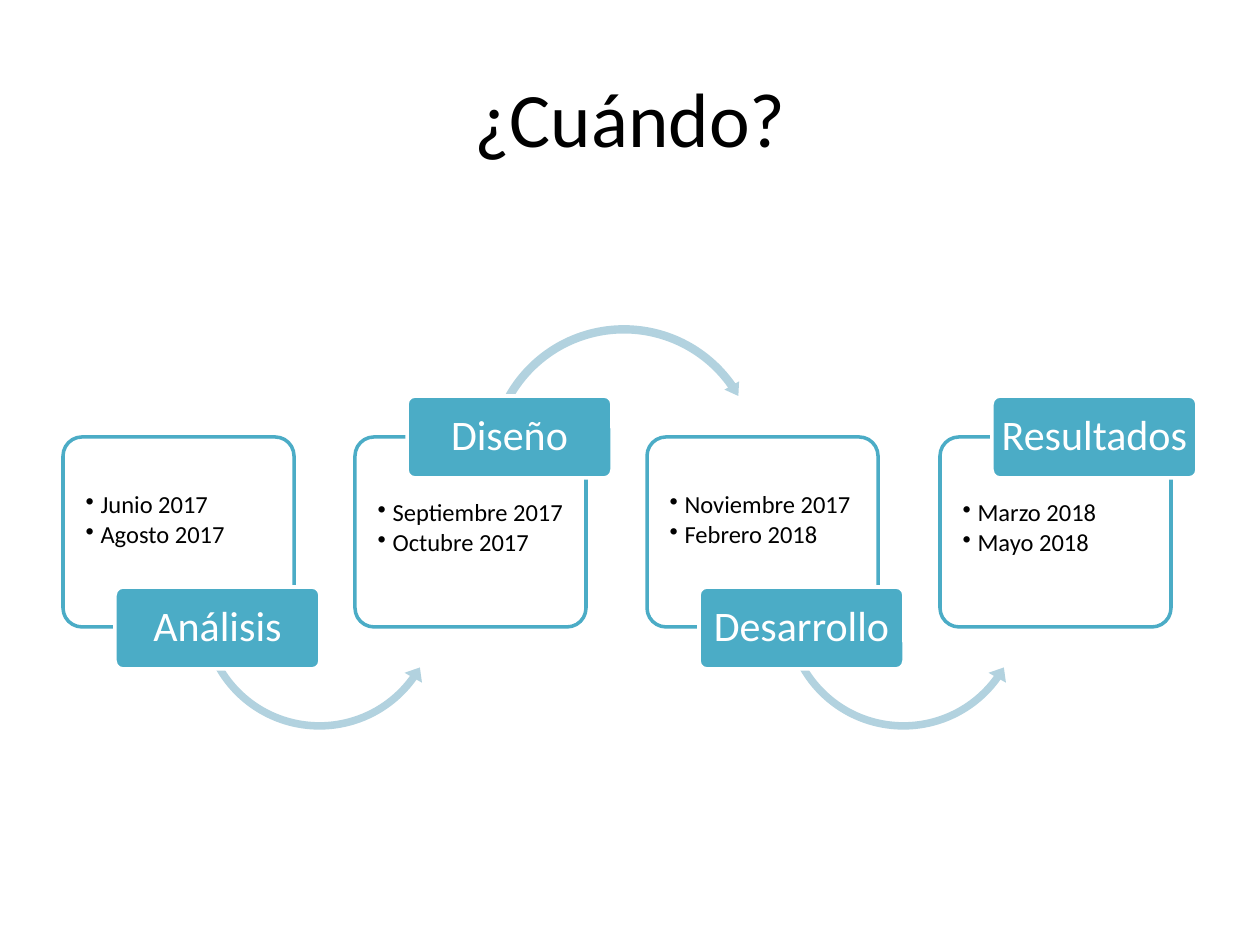
from lxml.etree import SubElement
from pptx import Presentation
from pptx.dml.color import RGBColor
from pptx.enum.shapes import MSO_SHAPE
from pptx.enum.text import MSO_ANCHOR, PP_ALIGN
from pptx.oxml.ns import qn
from pptx.util import Pt

TITLE = "¿Cuándo?"
STEPS = [
    ("Análisis", ["Junio 2017", "Agosto 2017"]),
    ("Diseño", ["Septiembre 2017", "Octubre 2017"]),
    ("Desarrollo", ["Noviembre 2017", "Febrero 2018"]),
    ("Resultados", ["Marzo 2018", "Mayo 2018"]),
]
TEAL, PALE, WHITE, BLACK = "4BACC6", "B2D2DF", "FFFFFF", "000000"
LOW = dict(label=587, pad=50, kind=MSO_SHAPE.LEFT_CIRCULAR_ARROW,
           arrow=(131, 485, 251), bend=(0.03, 3.64, 21.39, 90.24, 0.04))
HIGH = dict(label=396, pad=58, kind=MSO_SHAPE.CIRCULAR_ARROW,
            arrow=(129, 321, 280), bend=(0.03, 3.23, 195.02, 125.76, 0.03))


def px(n):
    return round(n * 914400 / 126)


def paint(color, text):
    color.rgb = RGBColor.from_string(text)


def add(kind, box, fill, line=None, bend=(0.1,)):
    shape = slide.shapes.add_shape(kind, *map(px, box))
    shape.shadow.inherit = False
    for i, value in enumerate(bend):
        shape.adjustments[i] = value
    shape.fill.solid()
    paint(shape.fill.fore_color, fill)
    if line:
        paint(shape.line.color, line)
        shape.line.width = Pt(2)
    else:
        shape.line.fill.background()
    return shape


def write(shape, lines, size, color, align, anchor, pads, bullet=False):
    frame = shape.text_frame
    frame.word_wrap = True
    frame.vertical_anchor = anchor
    (frame.margin_left, frame.margin_top,
     frame.margin_right, frame.margin_bottom) = map(px, pads)
    frame.text = "\n".join(lines)
    for para in frame.paragraphs:
        para.alignment = align
        para.line_spacing = 0.9
        if bullet:
            para.space_after = Pt(2)
            props = para._p.get_or_add_pPr()
            props.set("marL", str(px(15)))
            props.set("indent", str(px(-15)))
            SubElement(props, qn("a:buChar")).set("char", "•")
        para.font.size = Pt(size)
        para.font.name = "Calibri"
        paint(para.font.color, color)


deck = Presentation()
deck.slide_width, deck.slide_height = px(1260), px(945)
slide = deck.slides.add_slide(deck.slide_layouts[5])

title = slide.shapes.title
title.left, title.top, title.width, title.height = map(px, (63, 38, 1134, 158))
write(title, [TITLE], 44, BLACK, PP_ALIGN.CENTER, MSO_ANCHOR.MIDDLE, (13, 6, 13, 6))
title.text_frame.paragraphs[0].line_spacing = 1.0

for i, (name, dates) in enumerate(STEPS):
    side = HIGH if i % 2 else LOW
    left = 63 + 877 * i // 3
    card = add(MSO_SHAPE.ROUNDED_RECTANGLE, (left, 437, 231, 190), WHITE, TEAL)
    tone = card.fill._xPr.find(".//" + qn("a:srgbClr"))
    SubElement(tone, qn("a:alpha")).set("val", "90000")
    write(card, dates, 14, BLACK, PP_ALIGN.LEFT, MSO_ANCHOR.TOP,
          (17, side["pad"], 8, 18), bullet=True)
    if i < len(STEPS) - 1:
        shift, top, size = side["arrow"]
        add(side["kind"], (left + shift, top, size, size), PALE, bend=side["bend"])
    label = add(MSO_SHAPE.ROUNDED_RECTANGLE,
                (left + 52, side["label"], 205, 82), TEAL, WHITE)
    write(label, [name], 24, WHITE, PP_ALIGN.CENTER, MSO_ANCHOR.MIDDLE, (4, 4, 4, 4))

deck.save("out.pptx")
